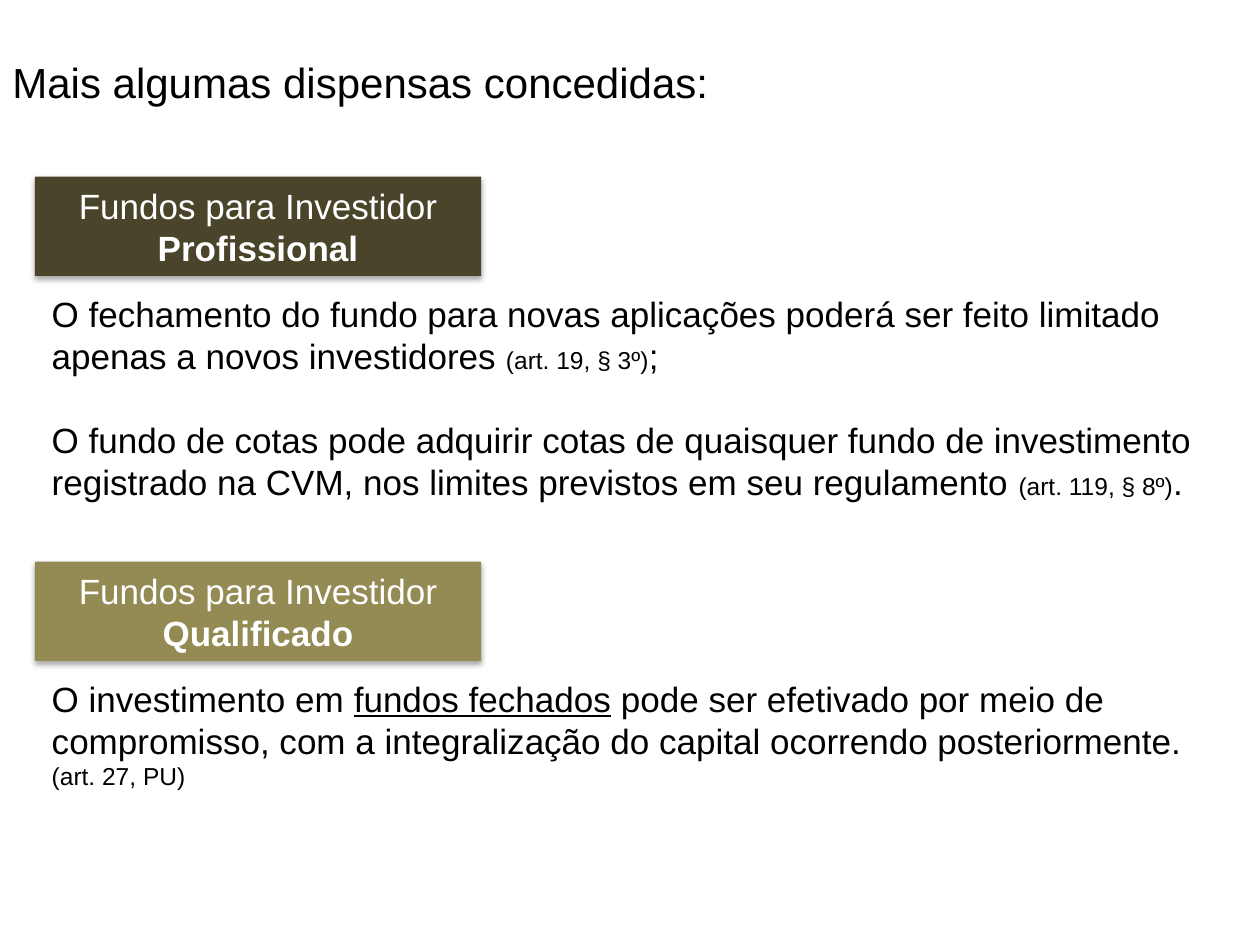
from dataclasses import dataclass

from lxml.etree import SubElement
from pptx import Presentation
from pptx.dml.color import RGBColor
from pptx.enum.shapes import MSO_SHAPE
from pptx.enum.text import MSO_ANCHOR, PP_ALIGN
from pptx.oxml.ns import qn
from pptx.util import Pt


@dataclass(frozen=True)
class Theme:
    """Colours, font and type sizes of the slide."""
    font: str = "Arial"
    ink: str = "000000"
    light: str = "FFFFFF"
    dark: str = "4A452A"
    olive: str = "948A54"
    head: int = 24
    body: int = 20
    note: int = 14


THEME = Theme()


def put_run(para, text, size=THEME.body, color=THEME.ink, bold=None, under=None):
    """Add a run of text with its format."""
    run = para.add_run()
    run.text = text
    font = run.font
    font.name, font.size = THEME.font, Pt(size)
    font.bold, font.underline = bold, under
    font.color.rgb = RGBColor.from_string(color)


def add_text(slide, box, paras, gap=0, top=3.6, align=PP_ALIGN.LEFT):
    """Add a text box whose paragraphs are lists of (text, format) runs."""
    frame = slide.shapes.add_textbox(*map(Pt, box)).text_frame
    frame.word_wrap = True
    frame.margin_top = Pt(top)
    for num, runs in enumerate(paras):
        para = frame.add_paragraph() if num else frame.paragraphs[0]
        para.alignment = align
        if num:
            para.space_before = Pt(gap)
        for text, form in runs:
            put_run(para, text, **form)


def add_shade(shape):
    """Give a shape a soft shadow below it."""
    shape.shadow.inherit = False
    effects = shape._element.spPr.find(qn("a:effectLst"))
    shade = SubElement(effects, qn("a:outerShdw"), blurRad=str(Pt(3.15)),
                       dist=str(Pt(1.81)), dir="5400000", rotWithShape="0")
    color = SubElement(shade, qn("a:srgbClr"), val=THEME.ink)
    SubElement(color, qn("a:alpha"), val="35000")


def add_label(slide, top, kind, fill):
    """Add the filled label that names a kind of investor."""
    box = map(Pt, (20, top, 255, 56.7))
    shape = slide.shapes.add_shape(MSO_SHAPE.RECTANGLE, *box)
    shape.fill.solid()
    shape.fill.fore_color.rgb = RGBColor.from_string(fill)
    shape.line.fill.background()
    add_shade(shape)
    frame = shape.text_frame
    frame.word_wrap = True
    frame.vertical_anchor = MSO_ANCHOR.MIDDLE
    para = frame.paragraphs[0]
    para.alignment = PP_ALIGN.CENTER
    put_run(para, "Fundos para Investidor ", color=THEME.light)
    put_run(para, kind, color=THEME.light, bold=True)


def add_part(slide, top, kind, fill, high, paras, gap=0):
    """Add a label with its body text below."""
    add_text(slide, (22.5, top + 62.5, 700.5, high), paras, gap=gap)
    add_label(slide, top, kind, fill)


def main():
    """Build and save the slide."""
    deck = Presentation()
    deck.slide_width, deck.slide_height = Pt(720), Pt(540)
    slide = deck.slides.add_slide(deck.slide_layouts[6])
    note = {"size": THEME.note}

    add_text(slide, (0, 0, 698, 90),
             [[("Mais algumas dispensas concedidas:", {"size": THEME.head})]],
             top=32.4, align=PP_ALIGN.JUSTIFY)
    add_part(slide, 101, "Profissional", THEME.dark, 157.5, [
        [("O fechamento do fundo para novas aplicações poderá ser feito "
          "limitado apenas a novos investidores ", {}),
         ("(art. 19, § 3º)", note), (";", {})],
        [("O fundo de cotas pode adquirir cotas de quaisquer fundo de "
          "investimento registrado na CVM, nos limites previstos em seu "
          "regulamento ", {}),
         ("(art. 119, § 8º)", note), (".", {})],
    ], gap=24)
    add_part(slide, 321, "Qualificado", THEME.olive, 92, [
        [("O investimento em ", {}), ("fundos fechados", {"under": True}),
         (" pode ser efetivado por meio de compromisso, com a "
          "integralização do capital ocorrendo posteriormente.", {})],
        [("(art. 27, PU)", note)],
    ])
    deck.save("out.pptx")


if __name__ == "__main__":
    main()
